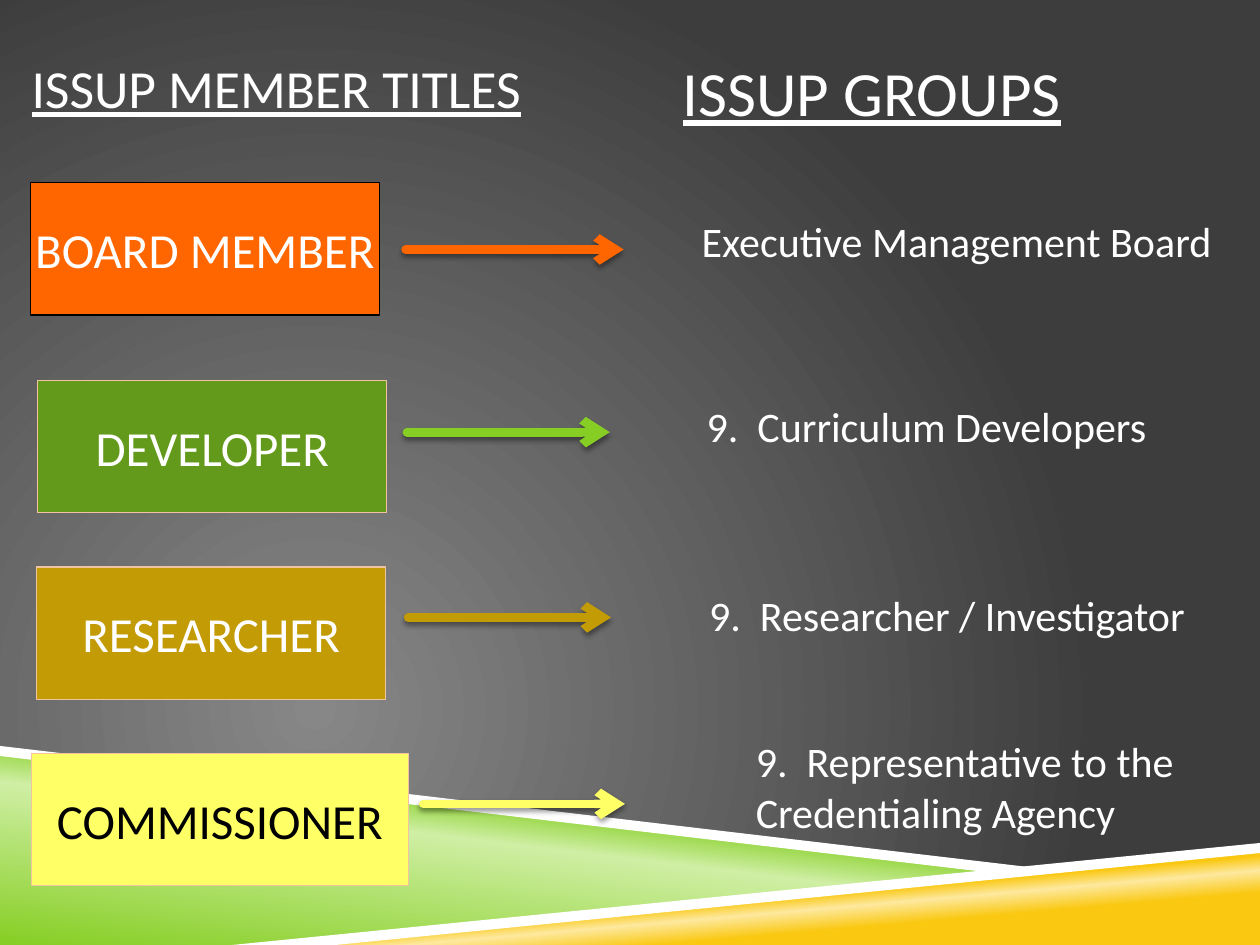
from lxml.etree import SubElement
from pptx import Presentation
from pptx.dml.color import RGBColor
from pptx.enum.shapes import MSO_CONNECTOR as CONNECTOR, MSO_SHAPE as SHAPE
from pptx.enum.text import MSO_ANCHOR as ANCHOR, MSO_AUTO_SIZE as AUTO_SIZE, PP_ALIGN as ALIGN
from pptx.oxml.ns import qn
from pptx.util import Inches, Pt

WHITE, BLACK, PEACH = "FFFFFF", "000000", "F1C3A1"
ORANGE, OLIVE, LIME, GOLD, YELLOW = "FF6600", "649A1B", "86CE24", "C39B04", "FFFF66"


def rgb(value):
    return RGBColor.from_string(value)


def child(parent, tag, **attributes):
    """Append a drawing element and return it."""
    element = SubElement(parent, qn(f"a:{tag}"))
    for name, value in attributes.items():
        element.set(name, str(value))
    return element


def set_gradient(owner, stops, angle=None, focus=None):
    """Refill the owner's gradient: linear at an angle, or circular around a focus."""
    gradient = next(owner.iter(qn("a:gradFill")))
    for old in list(gradient):
        gradient.remove(old)
    stop_list = child(gradient, "gsLst")
    for percent, colour in stops:
        child(child(stop_list, "gs", pos=percent * 1000), "srgbClr", val=colour)
    if focus:
        circle = child(gradient, "path")
        circle.set("path", "circle")
        child(circle, "fillToRect", **{side: v * 1000 for side, v in zip("ltrb", focus)})
    else:
        child(gradient, "lin", ang=angle * 60000, scaled=0)


class Board:
    """The current slide and its style."""

    font = "Calibri"
    box_height = 1.05
    box_size, group_size = 28, 24

    def __init__(self, slide):
        self.slide = slide
        self.shapes = slide.shapes

    def background(self, stops, focus):
        self.slide.background.fill.gradient()
        set_gradient(self.slide.element, stops, focus=focus)

    def polygon(self, points, colour=None, stops=None, angle=0):
        corners = [(Inches(x), Inches(y)) for x, y in points]
        builder = self.shapes.build_freeform(*corners[0])
        builder.add_line_segments(corners[1:], close=True)
        band = builder.convert_to_shape()
        band.shadow.inherit = False
        band.line.fill.background()
        if stops:
            band.fill.gradient()
            set_gradient(band._element.spPr, stops, angle)
        else:
            band.fill.solid()
            band.fill.fore_color.rgb = rgb(colour)

    def set_text(self, frame, text, size, colour=WHITE, align=ALIGN.LEFT, underline=None):
        frame.word_wrap = True
        frame.text = text
        paragraph = frame.paragraphs[0]
        paragraph.alignment = align
        font = paragraph.font
        font.name, font.size, font.underline = self.font, Pt(size), underline
        font.color.rgb = rgb(colour)

    def centre_vertically(self, frame):
        frame.vertical_anchor = ANCHOR.MIDDLE
        frame.margin_left = frame.margin_right = 0
        frame.auto_size = AUTO_SIZE.NONE

    def heading(self, shape, text, size, left, top, width):
        shape.left, shape.top = Inches(left), Inches(top)
        shape.width, shape.height = Inches(width), Inches(0.87)
        self.centre_vertically(shape.text_frame)
        self.set_text(shape.text_frame, text, size, underline=True)

    def member(self, text, left, top, width, fill, line, colour):
        box = self.shapes.add_shape(SHAPE.RECTANGLE, Inches(left), Inches(top),
                                    Inches(width), Inches(self.box_height))
        box.shadow.inherit = False
        box.fill.solid()
        box.fill.fore_color.rgb = rgb(fill)
        box.line.color.rgb = rgb(line)
        box.line.width = Pt(0.75)
        frame = box.text_frame
        self.centre_vertically(frame)
        frame.paragraphs[0]._p.get_or_add_pPr().set("marL", str(Inches(0.07)))
        self.set_text(frame, text, self.box_size, colour, ALIGN.CENTER)

    def arrow(self, start, end, y, colour):
        arrow = self.shapes.add_connector(CONNECTOR.STRAIGHT, Inches(start), Inches(y),
                                          Inches(end), Inches(y))
        arrow.line.color.rgb = rgb(colour)
        arrow.line.width = Pt(5)
        line = arrow.line._get_or_add_ln()
        line.set("cap", "rnd")
        child(line, "tailEnd", type="arrow")
        effects = child(arrow._element.spPr, "effectLst")
        shadow = child(effects, "outerShdw", blurRad=Pt(3), dist=Pt(2),
                       dir=90 * 60000, rotWithShape=0)
        child(child(shadow, "srgbClr", val=BLACK), "alpha", val=40000)

    def group(self, text, left, top, width, height, number=None):
        """Add a group name, with automatic numbering when a number is given."""
        frame = self.shapes.add_textbox(Inches(left), Inches(top), Inches(width),
                                        Inches(height)).text_frame
        frame.auto_size = AUTO_SIZE.SHAPE_TO_FIT_TEXT
        if number:
            properties = frame.paragraphs[0]._p.get_or_add_pPr()
            properties.set("marL", str(Inches(0.5)))
            properties.set("indent", str(-Inches(0.5)))
            child(properties, "buFont", typeface="+mj-lt")
            child(properties, "buAutoNum", type="arabicPeriod", startAt=number)
        self.set_text(frame, text, self.group_size)


# member box, arrow and group text of each row
ROWS = [
    (("BOARD MEMBER", 0.24, 1.45, 2.77, ORANGE, BLACK, WHITE),
     (3.22, 4.95, 1.98, ORANGE),
     ("Executive Management Board", 5.47, 1.66, 4.33, 0.91, 8)),
    (("DEVELOPER", 0.3, 3.02, 2.77, OLIVE, PEACH, WHITE),
     (3.23, 4.84, 3.43, LIME),
     ("9.  Curriculum Developers", 5.51, 3.13, 4.33, 0.5)),
    (("RESEARCHER", 0.29, 4.5, 2.77, GOLD, PEACH, WHITE),
     (3.24, 4.85, 4.9, GOLD),
     ("9.  Researcher / Investigator", 5.53, 4.63, 4.33, 0.5)),
    (("COMMISSIONER", 0.25, 5.98, 2.99, YELLOW, PEACH, BLACK),
     (3.36, 4.96, 6.38, YELLOW),
     ("9.  Representative to the Credentialing Agency", 5.9, 5.79, 3.96, 0.91)),
]


def main():
    deck = Presentation()
    deck.slide_width, deck.slide_height = Inches(10), Inches(7.5)
    slide = deck.slides.add_slide(deck.slide_layouts[5])
    board = Board(slide)

    board.background([(0, "878787"), (100, "3D3D3D")], focus=(50, 100, 100, 50))
    board.polygon([(0, 5.97), (7.92, 6.92), (2, 7.5), (0, 7.5)],
                  stops=[(0, LIME), (52, "CFEFA4"), (66, LIME)], angle=277)
    board.polygon([(1.98, 7.5), (10, 6.72), (10, 7.5)],
                  stops=[(28, "FAC810"), (40, "FDE99F"), (48, "FAC810")], angle=265)
    board.polygon([(0, 5.92), (0, 6), (7.9, 6.93), (8.32, 6.9)], WHITE)
    board.polygon([(10, 6.69), (1.84, 7.5), (2.66, 7.5), (10, 6.77)], WHITE)

    board.heading(slide.shapes.title, "ISSUP GROUPS", 36, 5.42, 0.29, 3.57)
    member_titles = slide.shapes.add_textbox(0, 0, 0, 0)
    board.heading(member_titles, "ISSUP MEMBER TITLES", 30.6, 0.25, 0.26, 4.28)

    for member, arrow, group in ROWS:
        board.member(*member)
        board.arrow(*arrow)
        board.group(*group)

    deck.save("out.pptx")


if __name__ == "__main__":
    main()
